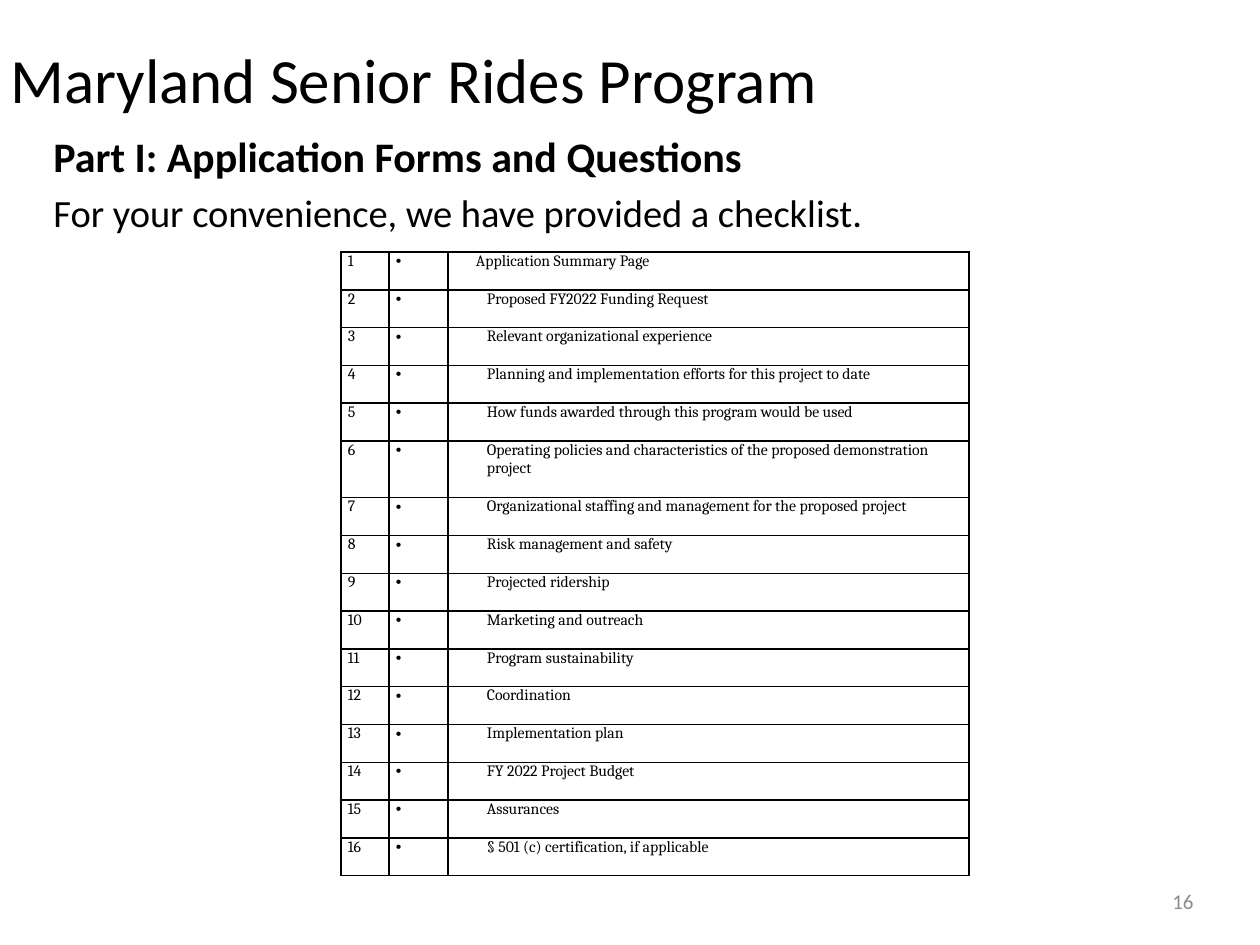
from lxml.etree import SubElement
from pptx import Presentation
from pptx.dml.color import RGBColor
from pptx.enum.text import MSO_ANCHOR, PP_ALIGN
from pptx.oxml.ns import qn
from pptx.util import Pt

SCALE = 914400 / 126
BLACK = RGBColor(0x00, 0x00, 0x00)
GRAY = RGBColor(0x8C, 0x8C, 0x8C)
HEADING_FONT = "Calibri"
TABLE_FONT = "Cambria"
NO_BREAK_SPACE = chr(160)

CHECKLIST = [
    "Application Summary Page",
    "Proposed FY2022 Funding Request",
    "Relevant organizational experience",
    "Planning and implementation efforts for this project to date",
    "How funds awarded through this program would be used",
    "Operating policies and characteristics of the proposed demonstration project",
    "Organizational staffing and management for the proposed project",
    "Risk management and safety",
    "Projected ridership",
    "Marketing and outreach",
    "Program sustainability",
    "Coordination",
    "Implementation plan",
    "FY 2022 Project Budget",
    "Assurances",
    "§ 501 (c) certification, if applicable",
]
WRAPPED_ITEM = 6
COLUMN_WIDTHS = (48, 59, 521)


def px(length):
    return round(length * SCALE)


def add_run(paragraph, text, font, size, color=BLACK, bold=False):
    run = paragraph.add_run()
    run.text = text
    run.font.name = font
    run.font.size = Pt(size)
    run.font.bold = bold
    run.font.color.rgb = color


def add_text_frame(slide, box, anchor):
    shape = slide.shapes.add_textbox(*map(px, box))
    frame = shape.text_frame
    frame.word_wrap = True
    frame.vertical_anchor = anchor
    return frame


def add_title(slide, box):
    frame = add_text_frame(slide, box, MSO_ANCHOR.MIDDLE)
    add_run(frame.paragraphs[0], "Maryland Senior Rides Program", HEADING_FONT, 36)


def add_introduction(slide, box):
    frame = add_text_frame(slide, box, MSO_ANCHOR.TOP)
    add_run(frame.paragraphs[0], "Part I: Application Forms and Questions",
            HEADING_FONT, 24, bold=True)
    paragraph = frame.add_paragraph()
    paragraph.space_before = Pt(4.8)
    add_run(paragraph, "For your convenience, we have provided a checklist.",
            HEADING_FONT, 22)


def add_page_number(slide, box):
    frame = add_text_frame(slide, box, MSO_ANCHOR.MIDDLE)
    paragraph = frame.paragraphs[0]
    paragraph.alignment = PP_ALIGN.RIGHT
    add_run(paragraph, "16", HEADING_FONT, 12, GRAY)


def set_borders(cell):
    properties = cell._tc.get_or_add_tcPr()
    for position, side in enumerate(("lnL", "lnR", "lnT", "lnB")):
        line = SubElement(properties, qn(f"a:{side}"), w=str(Pt(1)))
        fill = SubElement(line, qn("a:solidFill"))
        SubElement(fill, qn("a:srgbClr"), val=str(BLACK))
        properties.insert(position, line)


def prepare_cell(cell, indent=0):
    cell.margin_left = cell.margin_right = px(7)
    cell.margin_top = cell.margin_bottom = 0
    cell.fill.background()
    set_borders(cell)
    paragraph = cell.text_frame.paragraphs[0]
    paragraph._p.get_or_add_pPr().set("marL", str(px(indent)))
    return paragraph


def add_bullet(paragraph):
    properties = paragraph._p.get_or_add_pPr()
    properties.set("marL", str(px(30)))
    properties.set("indent", str(-px(30)))
    SubElement(properties, qn("a:buFont"), typeface="Arial")
    SubElement(properties, qn("a:buChar"), char="•")
    add_run(paragraph, NO_BREAK_SPACE, TABLE_FONT, 9)


def add_checklist(slide, box):
    shape = slide.shapes.add_table(len(CHECKLIST), len(COLUMN_WIDTHS), *map(px, box))
    table = shape.table
    table.first_row = False
    table.horz_banding = False
    for column, width in zip(table.columns, COLUMN_WIDTHS):
        column.width = px(width)
    line_height = px(box[3]) // (2 * len(CHECKLIST) + 1)
    for number, item in enumerate(CHECKLIST, start=1):
        row = table.rows[number - 1]
        row.height = line_height * (3 if number == WRAPPED_ITEM else 2)
        number_cell, bullet_cell, item_cell = row.cells
        add_run(prepare_cell(number_cell), str(number), TABLE_FONT, 9)
        add_bullet(prepare_cell(bullet_cell))
        indent = 21 if number == 1 else 32
        add_run(prepare_cell(item_cell, indent), item, TABLE_FONT, 9)


def main():
    presentation = Presentation()
    presentation.slide_width = px(1260)
    presentation.slide_height = px(945)
    slide = presentation.slides.add_slide(presentation.slide_layouts[6])
    add_title(slide, (-2, 0, 1134, 157))
    add_introduction(slide, (41, 124, 1134, 698))
    add_page_number(slide, (882, 876, 324, 50))
    add_checklist(slide, (341, 252, sum(COLUMN_WIDTHS), 624))
    presentation.save("out.pptx")


if __name__ == "__main__":
    main()
